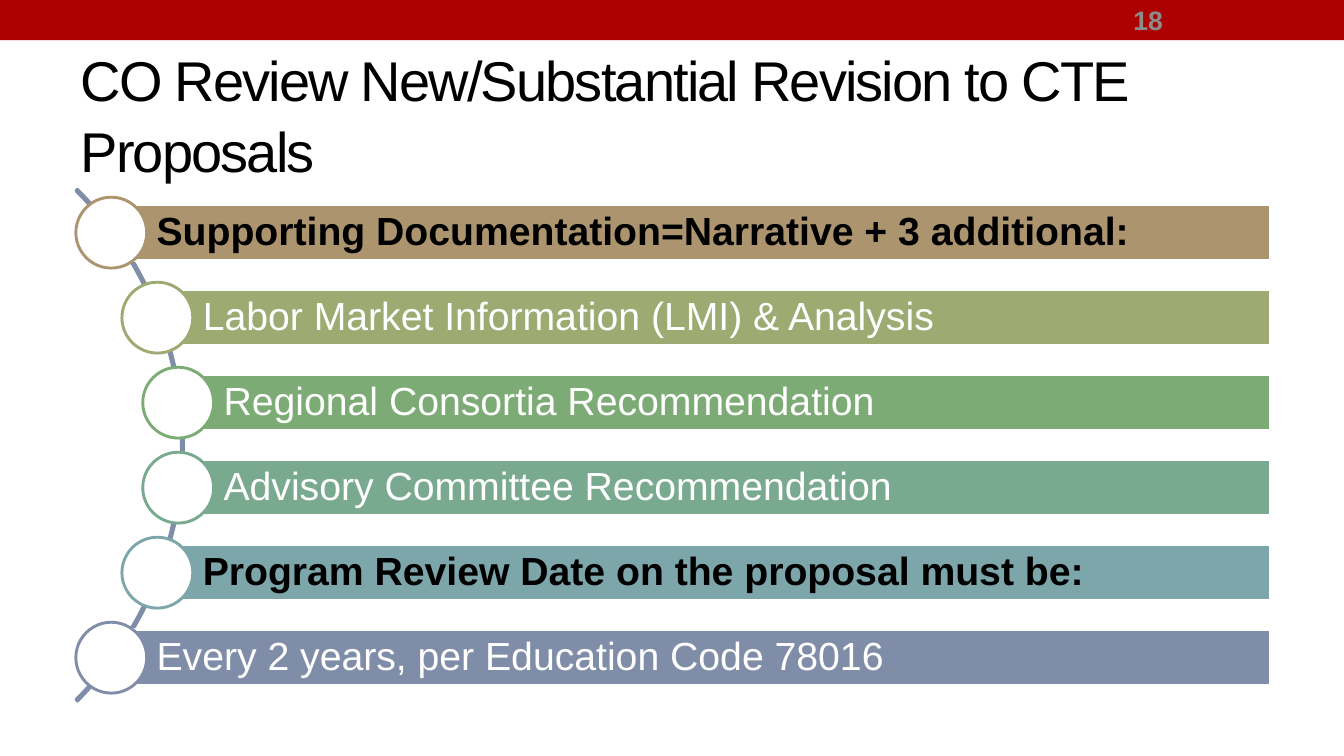
import math
from dataclasses import dataclass

from pptx import Presentation
from pptx import util as u
from pptx.dml.color import RGBColor
from pptx.enum import shapes, text

# Square grid: 40 columns by 22.5 rows
CELL = u.Inches(1 / 3)
FONT = "Arial"
LINE_WIDTH = u.Pt(2.08)

# Steps follow a curve whose centre lies left of the slide
MIDDLE_ROW = 13.25
ARC_CENTRE, ARC_RADIUS = -5.31, 10.77
RING_CENTRE, RING_RADIUS = -5.33, 10.71
STEP_PITCH = 2.53
BAR_HEIGHT, BAR_RIGHT = 1.68, 37.8
RING_SIZE = 2.11


@dataclass(frozen=True)
class Step:
    label: str
    colour: str
    heading: bool = False


STEPS = [
    Step("Supporting Documentation=Narrative + 3 additional:", "AC956E", True),
    Step("Labor Market Information (LMI) & Analysis", "9DAB72"),
    Step("Regional Consortia Recommendation", "7DAB75"),
    Step("Advisory Committee Recommendation", "79AA90"),
    Step("Program Review Date on the proposal must be:", "7CA6AA", True),
    Step("Every 2 years, per Education Code 78016", "808DA9"),
]


def cells(count: float) -> int:
    return round(count * CELL)


def colour(value: str) -> RGBColor:
    return RGBColor.from_string(value)


def add_shape(slide, kind, left: float, top: float, width: float, height: float,
              fill: str | None = None, line: str | None = None):
    shape = slide.shapes.add_shape(
        kind, cells(left), cells(top), cells(width), cells(height))
    shape.shadow.inherit = False
    if fill:
        shape.fill.solid()
        shape.fill.fore_color.rgb = colour(fill)
    else:
        shape.fill.background()
    if line:
        shape.line.color.rgb = colour(line)
        shape.line.width = LINE_WIDTH
    else:
        shape.line.fill.background()
    return shape


def write(shape, words: str, size: float, ink: str, bold: bool = False,
          insets: tuple[float, float, float, float] = (0.4, 0.2, 0.4, 0.2),
          spacing: float = 1.0):
    frame = shape.text_frame
    frame.word_wrap = True
    frame.auto_size = text.MSO_AUTO_SIZE.NONE
    frame.vertical_anchor = text.MSO_ANCHOR.MIDDLE
    (frame.margin_left, frame.margin_top,
     frame.margin_right, frame.margin_bottom) = map(cells, insets)
    paragraph = frame.paragraphs[0]
    paragraph.alignment = text.PP_ALIGN.LEFT
    paragraph.line_spacing = spacing
    run = paragraph.add_run()
    run.text = words
    run.font.name = FONT
    run.font.size = u.Pt(size)
    run.font.bold = bold
    run.font.color.rgb = colour(ink)
    return run


def add_header(slide) -> None:
    # Banner
    add_shape(slide, shapes.MSO_SHAPE.RECTANGLE, 0, 0, 40, 1.2, "AD0101")

    # Title
    title = slide.shapes.title
    title.left, title.top = cells(2), cells(1.74)
    title.width, title.height = cells(36), cells(3.24)
    run = write(title, "CO Review New/Substantial Revision to CTE Proposals",
                40, "000000", spacing=1.05)
    run.font._element.set("spc", "-130")

    # Slide number
    number = slide.shapes.add_textbox(
        cells(33.33), cells(0.06), cells(4.68), cells(1.08))
    write(number, "18", 19, "8C8C8C", bold=True)


def add_curve(slide) -> None:
    curve = add_shape(slide, shapes.MSO_SHAPE.BLOCK_ARC,
                      ARC_CENTRE - ARC_RADIUS, MIDDLE_ROW - ARC_RADIUS,
                      2 * ARC_RADIUS, 2 * ARC_RADIUS, line="808DA9")
    for index, value in enumerate((189, 27, 0.003)):
        curve.adjustments[index] = value


def add_step(slide, step: Step, index: int) -> None:
    offset = (index - (len(STEPS) - 1) / 2) * STEP_PITCH
    row = MIDDLE_ROW + offset
    column = RING_CENTRE + math.sqrt(RING_RADIUS ** 2 - offset ** 2)
    bar = add_shape(slide, shapes.MSO_SHAPE.RECTANGLE,
                    column, row - BAR_HEIGHT / 2, BAR_RIGHT - column, BAR_HEIGHT,
                    step.colour, "FFFFFF")
    write(bar, step.label, 28, "000000" if step.heading else "FFFFFF",
          step.heading, (1.35, 0.24, 0.24, 0.24), 0.9)
    add_shape(slide, shapes.MSO_SHAPE.OVAL,
              column - RING_SIZE / 2, row - RING_SIZE / 2, RING_SIZE, RING_SIZE,
              "FFFFFF", step.colour)


def main() -> None:
    presentation = Presentation()
    presentation.slide_width = cells(40)
    presentation.slide_height = cells(22.5)
    slide = presentation.slides.add_slide(presentation.slide_layouts[5])
    add_header(slide)
    add_curve(slide)
    for index, step in enumerate(STEPS):
        add_step(slide, step, index)
    presentation.save("out.pptx")


if __name__ == "__main__":
    main()
